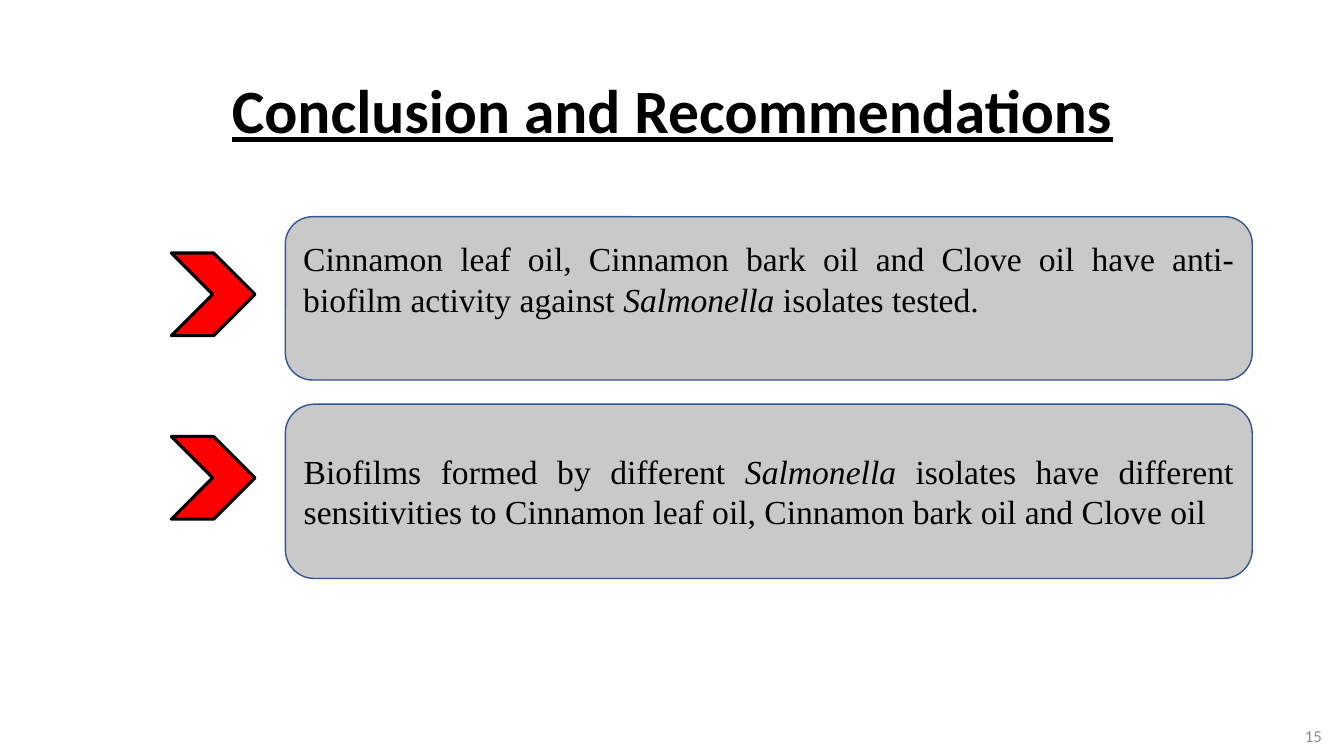
"""Build the conclusion slide: two findings, each marked by a red chevron."""
from dataclasses import dataclass

from pptx import Presentation
from pptx.dml.color import RGBColor
from pptx.enum.shapes import MSO_SHAPE
from pptx.enum.text import MSO_ANCHOR, MSO_AUTO_SIZE, PP_ALIGN
from pptx.shapes.autoshape import Shape
from pptx.slide import Slide
from pptx.util import Inches, Pt

BLACK = "000000"
GENUS = "Salmonella"


@dataclass
class Finding:
    before: str
    after: str
    top: float
    height: float
    chevron_top: float
    bottom_inset: float = 0.05


FINDINGS = [
    Finding(
        "Cinnamon leaf oil, Cinnamon bark oil and Clove oil have anti-biofilm activity against ",
        " isolates tested.",
        top=2.15, height=1.62, chevron_top=2.51, bottom_inset=0.44,
    ),
    Finding(
        "Biofilms formed by different ",
        " isolates have different sensitivities to Cinnamon leaf oil, "
        "Cinnamon bark oil and Clove oil",
        top=4.01, height=1.73, chevron_top=4.33,
    ),
]


def colour(value: str) -> RGBColor:
    return RGBColor.from_string(value)


def place(shape: Shape, left: float, top: float, width: float, height: float) -> None:
    shape.left, shape.top = Inches(left), Inches(top)
    shape.width, shape.height = Inches(width), Inches(height)


def add_block(page: Slide, kind: MSO_SHAPE, left: float, top: float, width: float,
              height: float, fill: str, line: str, weight: float) -> Shape:
    block = page.shapes.add_shape(
        kind, Inches(left), Inches(top), Inches(width), Inches(height))
    block.shadow.inherit = False
    block.fill.solid()
    block.fill.fore_color.rgb = colour(fill)
    block.line.color.rgb = colour(line)
    block.line.width = Pt(weight)
    return block


def add_title(page: Slide) -> None:
    title = page.shapes.title
    place(title, 0.92, 0.4, 11.5, 1.45)
    frame = title.text_frame
    frame.text = "Conclusion and Recommendations"
    frame.vertical_anchor = MSO_ANCHOR.MIDDLE
    frame.auto_size = MSO_AUTO_SIZE.NONE
    para = frame.paragraphs[0]
    para.alignment = PP_ALIGN.CENTER
    para.line_spacing = 0.9
    font = para.font
    font.name, font.size = "Calibri", Pt(44)
    font.bold = font.underline = True
    font.color.rgb = colour(BLACK)


def add_finding(page: Slide, finding: Finding) -> None:
    box = add_block(page, MSO_SHAPE.ROUNDED_RECTANGLE, 2.83, finding.top, 9.59,
                    finding.height, "C9C9C9", "325491", 1)
    frame = box.text_frame
    frame.word_wrap = True
    frame.vertical_anchor = MSO_ANCHOR.MIDDLE
    frame.margin_bottom = Inches(finding.bottom_inset)
    para = frame.paragraphs[0]
    para.alignment = PP_ALIGN.JUSTIFY
    para.font.name, para.font.size = "Times New Roman", Pt(24)
    para.font.color.rgb = colour(BLACK)
    for words in (finding.before, GENUS, finding.after):
        span = para.add_run()
        span.text = words
        span.font.italic = words == GENUS
    add_block(page, MSO_SHAPE.CHEVRON, 1.7, finding.chevron_top, 0.83, 0.82,
              "FF0000", BLACK, 2.25)


def add_page_number(page: Slide) -> None:
    box = page.shapes.add_textbox(Inches(10.21), Inches(7.1), Inches(3), Inches(0.4))
    frame = box.text_frame
    frame.word_wrap = True
    frame.vertical_anchor = MSO_ANCHOR.MIDDLE
    para = frame.paragraphs[0]
    para.text = "15"
    para.alignment = PP_ALIGN.RIGHT
    para.font.name, para.font.size = "Calibri", Pt(12)
    para.font.color.rgb = colour("8C8C8C")


def main() -> None:
    deck = Presentation()
    deck.slide_width, deck.slide_height = Inches(13.33), Inches(7.5)
    page = deck.slides.add_slide(deck.slide_layouts.get_by_name("Title Only"))
    add_title(page)
    for finding in FINDINGS:
        add_finding(page, finding)
    add_page_number(page)
    deck.save("out.pptx")


if __name__ == "__main__":
    main()
